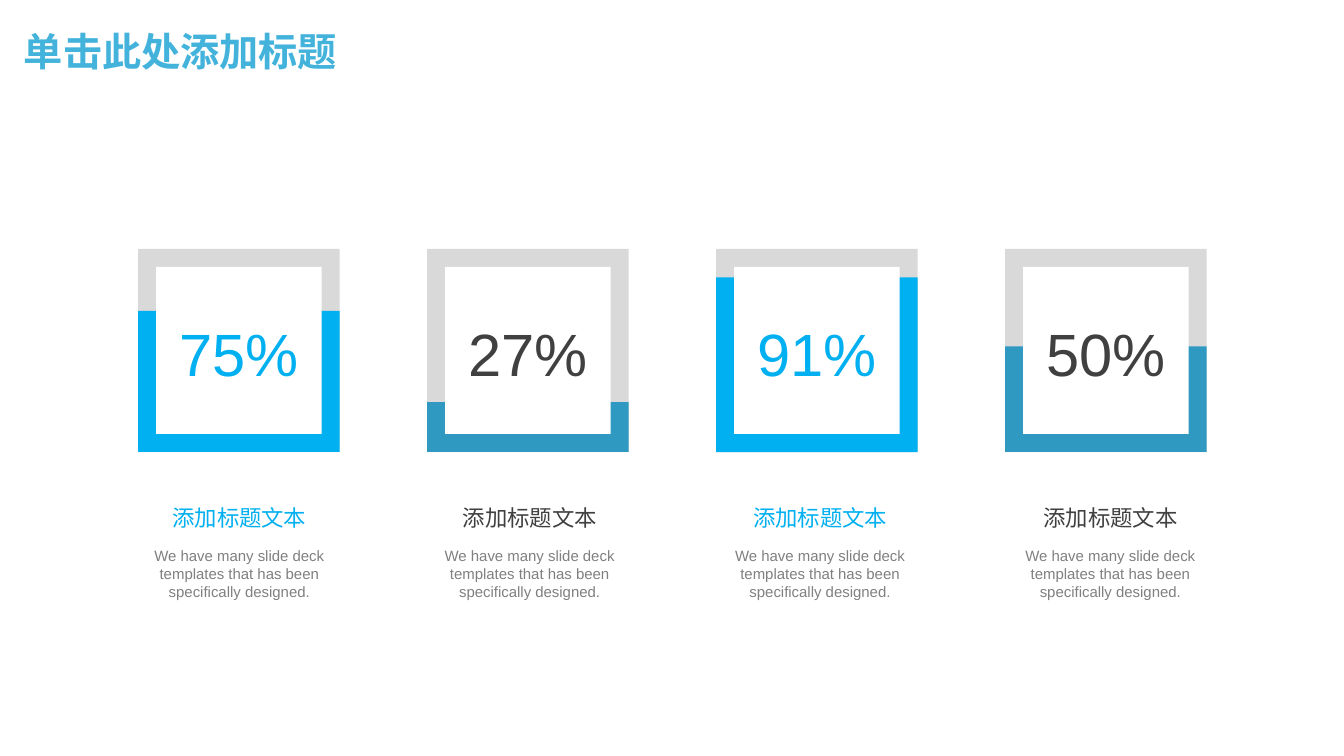
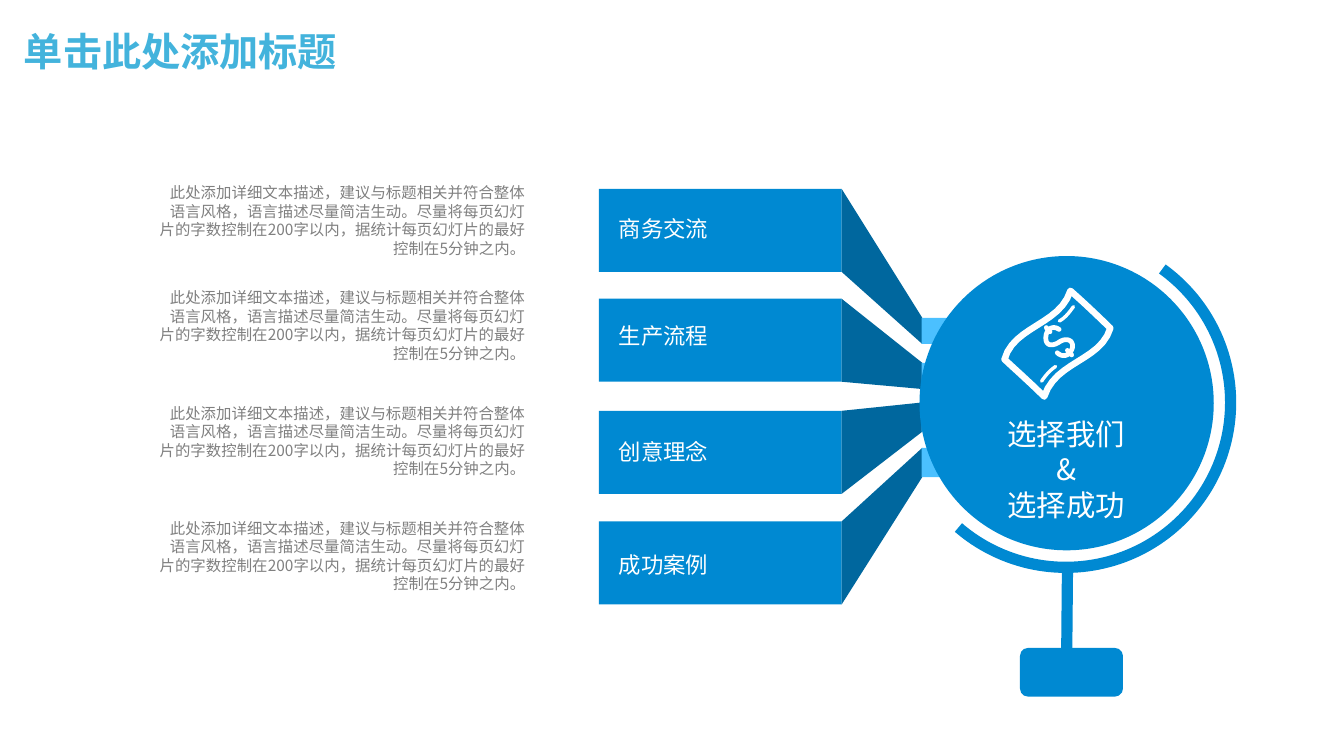
from lxml import etree
from pptx import Presentation
from pptx.dml.color import RGBColor
from pptx.enum import shapes, text
from pptx.oxml.ns import qn
from pptx.util import Pt

KIND = shapes.MSO_SHAPE
ALIGN = text.PP_ALIGN
CJK = "Noto Sans CJK SC"
WHITE, GREY, DARK, TRACK = "FFFFFF", "808080", "404040", "D9D9D9"
TITLE, SKY, TEAL = "43B3DC", "00B0F0", "2F99C1"
BLUE, NAVY, LIGHT = "0089D2", "00679E", "4BC0FF"

# number, height of the filled part, fill colour, text colour
GAUGES = [
    ("75%", 100.8, SKY, SKY),
    ("27%", 35.6, TEAL, DARK),
    ("91%", 124.8, SKY, SKY),
    ("50%", 75.4, TEAL, DARK),
]
BLURB = "We have many slide deck templates that has been specifically designed."

# label, tops of detail, bar, label and tip, height of tip
ROWS = [
    ("商务交流", 127.4, 134.9, 149.8, 227, 18.7),
    ("生产流程", 202.3, 213.4, 226.8, 259.2, 18.7),
    ("创意理念", 285.1, 293.5, 309.6, 287.5, 20.9),
    ("成功案例", 367.2, 372.5, 390.2, 319.9, 20.9),
]
DETAIL = ("此处添加详细文本描述，建议与标题相关并符合整体语言风格，语言描述尽量简洁生动。"
          "尽量将每页幻灯片的字数控制在200字以内，据统计每页幻灯片的最好控制在5分钟之内。")

# Curves of the banknote: a start, then three points for each Bézier part
NOTE = [(745.9, 283.3), (737, 274.5), (727, 265.5), (717.5, 256.7),
        (724, 233), (757, 232), (764.6, 207.7),
        (774, 216), (784, 225.5), (793.1, 234.4),
        (786, 258), (754, 258), (745.9, 283.3)]
DOLLAR = [(756.5, 235.3), (752, 232), (747, 235), (747, 241.5),
          (747, 248), (753, 247), (757, 244),
          (762, 241), (767, 243), (766, 248.5),
          (764, 254.5), (759, 255.5), (755.2, 252)]
STEM_TOP = [(747.4, 234), (748, 235), (749, 236), (750, 237)]
STEM_END = [(762.5, 250.3), (763.5, 251.3), (764.5, 252.3), (765.5, 253.5)]
CREASES = [[(744, 272.3), (747, 268), (750, 264.5), (754, 261.8)],
           [(756.7, 229.3), (761, 227), (764, 223), (766.8, 219)]]


def color(code):
    return RGBColor.from_string(code)


def paint(shape, fill=None, line=None, width=0):
    shape.shadow.inherit = False
    if fill:
        shape.fill.solid()
        shape.fill.fore_color.rgb = color(fill)
    else:
        shape.fill.background()
    if line:
        shape.line.color.rgb = color(line)
        shape.line.width = Pt(width)
    else:
        shape.line.fill.background()
    return shape


def block(slide, kind, x, y, w, h, fill=None, line=None, width=0):
    shape = slide.shapes.add_shape(kind, Pt(x), Pt(y), Pt(w), Pt(h))
    return paint(shape, fill, line, width)


def trace(slide, points, close):
    first, *rest = [(Pt(x), Pt(y)) for x, y in points]
    pen = slide.shapes.build_freeform(*first)
    pen.add_line_segments(rest, close=close)
    return pen.convert_to_shape()


def bend(points, steps=12):
    """Sample a chain of cubic Bézier parts."""
    out = [points[0]]
    for i in range(0, len(points) - 1, 3):
        a, b, c, d = points[i:i + 4]
        for n in range(1, steps + 1):
            t = n / steps
            s = 1 - t
            out.append(tuple(s**3 * p + 3 * s * s * t * q + 3 * s * t * t * r + t**3 * v
                             for p, q, r, v in zip(a, b, c, d)))
    return out


def stroke(slide, points, width, close=False):
    """Draw a white curve with round ends and corners."""
    shape = paint(trace(slide, bend(points), close), line=WHITE, width=width)
    ln = shape.line._get_or_add_ln()
    ln.set("cap", "rnd")
    etree.SubElement(ln, qn("a:round"))


def write(slide, words, x, y, w, h, size, tint, face=CJK, align=ALIGN.LEFT,
          inset=True, wrap=True, space=None, bold=False, middle=False):
    frame = slide.shapes.add_textbox(Pt(x), Pt(y), Pt(w), Pt(h)).text_frame
    frame.word_wrap = wrap
    if middle:
        frame.vertical_anchor = text.MSO_ANCHOR.MIDDLE
    if not inset:
        frame.margin_left = frame.margin_right = 0
        frame.margin_top = frame.margin_bottom = 0
    frame.text = words
    for para in frame.paragraphs:
        para.alignment = align
        if space:
            para.line_spacing = space
        font = para.font
        font.size, font.bold, font.name = Pt(size), bold, face
        font.color.rgb = color(tint)
        east = etree.SubElement(para._p.pPr.find(qn("a:defRPr")), qn("a:ea"))
        east.set("typeface", CJK)


def page(deck):
    """Add a slide with the shared title."""
    slide = deck.slides.add_slide(deck.slide_layouts[6])
    write(slide, "单击此处添加标题", 10, 10, 828, 57, 28, TITLE, "Montserrat",
          space=0.9, bold=True, middle=True)
    return slide


def gauge(slide, i, number, level, fill, tint):
    x, top, side, edge = 98.7 + 206.4 * i, 177.8, 144, 12.9
    base = top + 145.1
    block(slide, KIND.RECTANGLE, x, top, side, base - top, TRACK)
    block(slide, KIND.RECTANGLE, x, base - level, side, level, fill)
    block(slide, KIND.RECTANGLE, x + edge, top + edge, side - 2 * edge,
          base - top - 2 * edge, WHITE)
    write(slide, number, x + 11.5, 226, 121, 52, 42.6, tint, "Arial",
          ALIGN.CENTER, inset=False)
    mid = 171 + 207.4 * i
    write(slide, "添加标题文本", mid - 56, 353, 112, 30, 16, tint,
          align=ALIGN.CENTER, wrap=False, space=1.2)
    write(slide, BLURB, mid - 75.6, 390.2, 151.2, 39, 10.7, GREY, "Arial",
          ALIGN.CENTER, inset=False)


def branch(slide, label, detail, bar, name, tip, thick):
    left, width, high, end = 427.7, 173.5, 59.3, 658.8
    right = left + width
    write(slide, DETAIL, 105.1, detail, 277.2, 61, 11, GREY, align=ALIGN.RIGHT)
    block(slide, KIND.RECTANGLE, left, bar, width, high, BLUE)
    paint(trace(slide, [(right, bar), (right, bar + high), (end, tip + thick),
                        (end, tip)], True), NAVY)
    block(slide, KIND.RECTANGLE, end - 0.5, tip, 21, thick, LIGHT)
    write(slide, label, 434.9, name, 79, 27, 16, WHITE, wrap=False)


def globe(slide):
    arc = block(slide, KIND.ARC, 643.7, 169.9, 235.4, 235.4, line=BLUE, width=8)
    arc.adjustments[0], arc.adjustments[1] = 183.5, 78.42
    block(slide, KIND.OVAL, 656.8, 182.9, 210.2, 210.2, BLUE)
    pole = slide.shapes.add_connector(shapes.MSO_CONNECTOR.STRAIGHT,
                                      Pt(762.5), Pt(406.8), Pt(761.8), Pt(483.8))
    pole.line.color.rgb = color(BLUE)
    pole.line.width = Pt(8)
    etree.SubElement(pole._element.spPr, qn("a:effectLst"))
    block(slide, KIND.ROUNDED_RECTANGLE, 728.6, 462.8, 73.6, 34.8, BLUE)
    write(slide, "选择我们\n&\n选择成功", 712, 293.8, 99.4, 83.5, 21, WHITE,
          align=ALIGN.CENTER, wrap=False)


def money(slide):
    stroke(slide, NOTE, 4.6, close=True)
    for curve in (DOLLAR, STEM_TOP, STEM_END):
        stroke(slide, curve, 3.4)
    for curve in CREASES:
        stroke(slide, curve, 2.4)


def main():
    deck = Presentation()
    deck.slide_width, deck.slide_height = Pt(960), Pt(540)
    slide = page(deck)
    for i, item in enumerate(GAUGES):
        gauge(slide, i, *item)
    slide = page(deck)
    for row in ROWS:
        branch(slide, *row)
    globe(slide)
    money(slide)
    deck.save("out.pptx")


if __name__ == "__main__":
    main()
